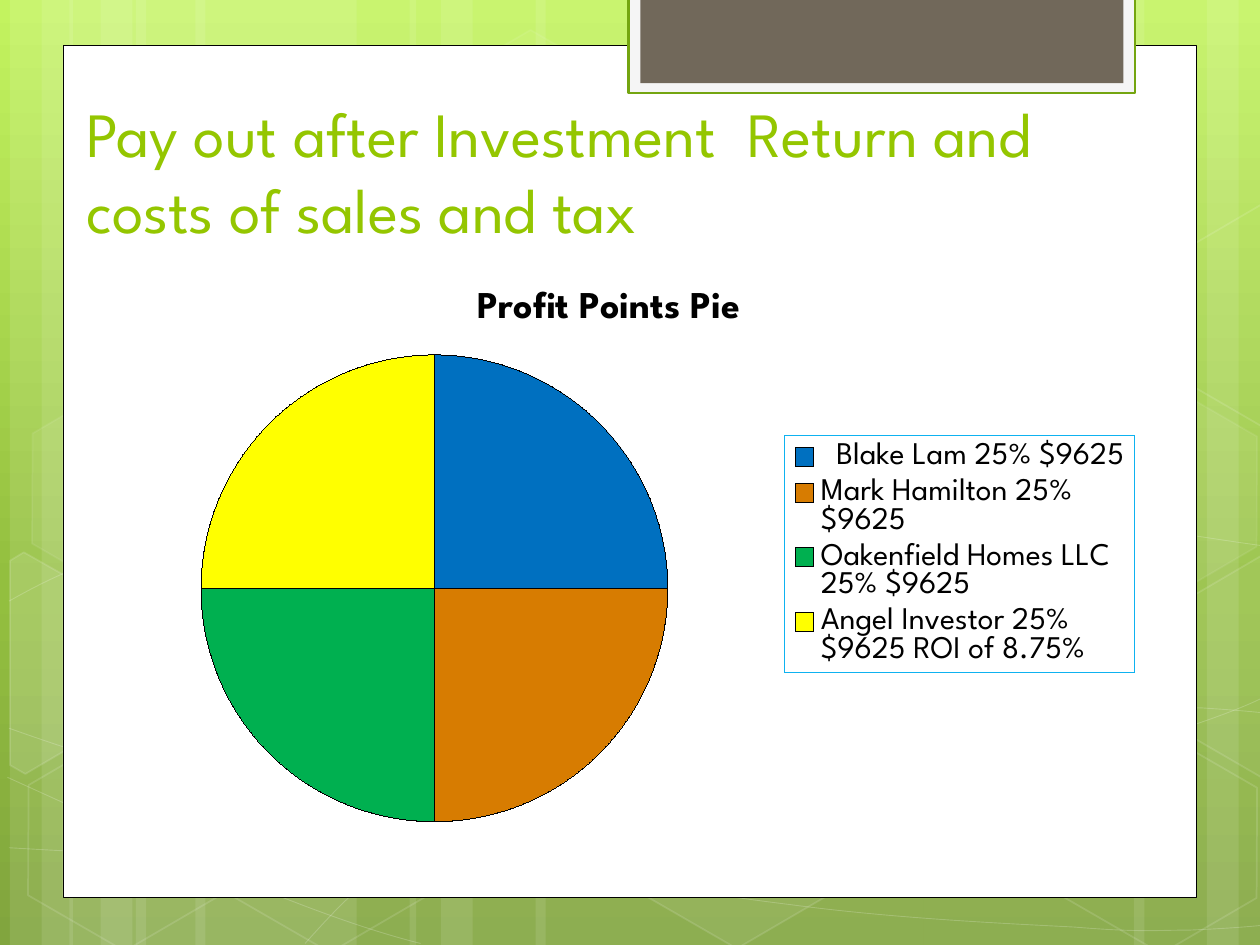
"""Build a profit share slide with a pie chart on a green patterned background."""
from copy import deepcopy
from dataclasses import dataclass
from math import cos, radians, sin
from typing import Optional

from lxml import etree
from pptx import Presentation
from pptx.chart.data import CategoryChartData
from pptx.dml.color import RGBColor
from pptx.enum.chart import XL_CHART_TYPE, XL_LEGEND_POSITION
from pptx.enum.shapes import MSO_SHAPE
from pptx.enum.text import MSO_ANCHOR, MSO_AUTO_SIZE, PP_ALIGN
from pptx.oxml import parse_xml
from pptx.oxml.ns import nsdecls, qn
from pptx.util import Cm, Pt

RECTANGLE = MSO_SHAPE.RECTANGLE
HEXAGON = MSO_SHAPE.HEXAGON
PIE = XL_CHART_TYPE.PIE
LEGEND_RIGHT = XL_LEGEND_POSITION.RIGHT
ANCHOR_BOTTOM = MSO_ANCHOR.BOTTOM
NO_AUTO_SIZE = MSO_AUTO_SIZE.NONE
ALIGN_LEFT = PP_ALIGN.LEFT

WHITE = RGBColor(0xFF, 0xFF, 0xFF)
BLACK = RGBColor(0, 0, 0)
TITLE_GREEN = RGBColor(0x94, 0xC6, 0x00)
TAB_GREEN = RGBColor(0x74, 0xA5, 0x10)
TAB_GREY = RGBColor(0xF5, 0xF5, 0xF5)
TAB_BROWN = RGBColor(0x71, 0x68, 0x5A)
LEGEND_BLUE = RGBColor(0x0E, 0xB2, 0xF0)
GRADIENT = [
    (0, RGBColor(0xC3, 0xF3, 0x5F)),
    (0.62, RGBColor(0x93, 0xBF, 0x3F)),
    (1, RGBColor(0x81, 0xA5, 0x3E)),
]
FONT = "League Spartan"
WIDTH, HEIGHT = 25.4, 19.05
TILT = 30

Point = tuple[float, float]


@dataclass
class Style:
    fill: Optional[RGBColor] = None
    fill_opacity: int = 100
    line: Optional[RGBColor] = None
    line_width: float = 1
    line_opacity: int = 100


@dataclass
class Box:
    left: float
    top: float
    width: float
    height: float
    style: Style


@dataclass
class CutHexagon:
    center: Point
    points: list[Point]
    style: Style


@dataclass
class Slice:
    label: str
    share: int
    color: RGBColor


def glass(fill_opacity: int, line_opacity: int) -> Style:
    return Style(WHITE if fill_opacity else None, fill_opacity, WHITE, 1, line_opacity)


BAND = Style(WHITE, 10)
BANDS = [
    (2.74, 4.45), (0.2, 1.27), (0.84, 2.11), (3.94, 4.45), (1.4, 1.27), (2.03, 2.11),
    (18.62, 4.45), (24.33, 1.27), (22.86, 2.11), (10.8, 7.82), (8.26, 1.27), (8.89, 2.11),
]
CURVE = Style(line=WHITE, line_width=0.5, line_opacity=20)
CURVES = [
    [(0.18, 17.09), (1.55, 17.17), (2.92, 17.25), (4.83, 17.22), (6.73, 17.2),
     (9.09, 17.15), (11.63, 16.89), (14.17, 16.64), (17.78, 16.15), (20.12, 15.67),
     (22.43, 15.19), (24.82, 14.43), (25.58, 14)],
    [(0.18, 12.12), (0.91, 11.71), (1.65, 11.33), (3.07, 10.95), (4.52, 10.57),
     (6.58, 10.01), (8.81, 9.83), (11.07, 9.65), (13.82, 9.63), (16.61, 9.83),
     (19.41, 10.03), (24.05, 10.82), (25.58, 11.02)],
    [(0.15, 15.67), (3.23, 17.07), (6.27, 18.47), (8.48, 19.02)],
    [(0.18, 14.68), (0.97, 14.96), (1.78, 15.24), (3.25, 15.65), (4.72, 16.03),
     (6.93, 16.66), (9.07, 17.09), (11.18, 17.53), (13.84, 17.98), (15.95, 18.24),
     (18.06, 18.52), (20.32, 18.62), (21.67, 18.69), (22.99, 18.8), (23.34, 18.75),
     (24, 18.75), (24.66, 18.72), (25.12, 18.69), (25.58, 18.64)],
    [(6.15, 19.02), (6.6, 18.52), (7.06, 18.01), (7.67, 17.55), (8.28, 17.09),
     (9.14, 16.59), (9.86, 16.23), (10.57, 15.88), (11, 15.72), (11.94, 15.47),
     (12.88, 15.21), (14.55, 14.86), (15.44, 14.68), (16.36, 14.5), (16.48, 14.5),
     (17.27, 14.45), (18.03, 14.38), (19.3, 14.3), (20.17, 14.27), (21.06, 14.25),
     (22.5, 14.27), (24.21, 14.27), (24.66, 14.3), (25.1, 14.33), (25.55, 14.38)],
]
HEXAGONS = [
    Box(left, top, 4.45, 3.86, glass(fill_opacity, line_opacity))
    for left, top, fill_opacity, line_opacity in [
        (8.48, 0.91, 4, 8), (12.62, 14.96, 6, 12), (0.28, 15.01, 0, 12), (0.36, 7.92, 7, 8),
        (4.42, 15.04, 0, 12), (19.13, 11.51, 10, 12), (21.18, 15.06, 0, 12), (21.18, 7.98, 7, 8),
    ]
]
LEFT_EDGE = [(0.2, 11.3), (0.48, 11.13), (2.44, 12.24), (2.41, 14.48), (0.51, 15.6), (0.2, 15.42)]
RIGHT_EDGE = [(23.52, 12.32), (25.43, 11.2), (25.63, 11.33), (25.63, 15.57), (25.45, 15.67), (23.52, 14.55)]
UPPER_RIGHT_EDGE = [(x, y - 7.08) for x, y in RIGHT_EDGE]
CUT_HEXAGONS = [
    CutHexagon((0.91, 13.59), LEFT_EDGE, glass(10, 12)),
    CutHexagon((25.02, 13.21), RIGHT_EDGE, glass(4, 12)),
    CutHexagon((25.02, 6.13), UPPER_RIGHT_EDGE, glass(0, 12)),
]
PANELS = [
    Box(1.27, 0.91, 22.86, 17.18, Style(WHITE, line=BLACK, line_width=0.5)),
    Box(12.67, -0.05, 10.21, 1.93, Style(TAB_GREY, line=TAB_GREEN, line_width=1.25)),
    Box(12.91, -0.05, 9.74, 1.73, Style(TAB_BROWN)),
]
SLICES = [
    Slice("  Blake Lam 25% $9625", 25, RGBColor(0x00, 0x70, 0xC0)),
    Slice("Mark Hamilton 25% $9625", 25, RGBColor(0xD7, 0x7C, 0x01)),
    Slice("Oakenfield Homes LLC 25% $9625", 25, RGBColor(0x00, 0xB0, 0x50)),
    Slice("Angel Investor 25% $9625 ROI of 8.75%", 25, RGBColor(0xFF, 0xFF, 0x00)),
]


def set_opacity(shape, parent: str, percent: int) -> None:
    if percent < 100:
        color = shape.element.xpath(f"./p:spPr/{parent}a:solidFill/a:srgbClr")[0]
        etree.SubElement(color, qn("a:alpha"), val=str(percent * 1000))


def apply_style(shape, style: Style) -> None:
    shape.shadow.inherit = False
    if style.fill is None:
        shape.fill.background()
    else:
        shape.fill.solid()
        shape.fill.fore_color.rgb = style.fill
        set_opacity(shape, "", style.fill_opacity)
    if style.line is None:
        shape.line.fill.background()
    else:
        shape.line.color.rgb = style.line
        shape.line.width = Pt(style.line_width)
        set_opacity(shape, "a:ln/", style.line_opacity)


def draw_box(slide, box: Box, kind=RECTANGLE):
    shape = slide.shapes.add_shape(kind, Cm(box.left), Cm(box.top), Cm(box.width), Cm(box.height))
    apply_style(shape, box.style)
    return shape


def draw_outline(slide, points: list[Point], style: Style, close: bool):
    (start_x, start_y), *rest = [(Cm(x), Cm(y)) for x, y in points]
    builder = slide.shapes.build_freeform(start_x, start_y)
    builder.add_line_segments(rest, close=close)
    shape = builder.convert_to_shape()
    apply_style(shape, style)
    return shape


def draw_curve(slide, controls: list[Point]) -> None:
    shape = draw_outline(slide, controls, CURVE, False)
    segments = shape.element.xpath(".//a:lnTo")
    for start in range(0, len(segments), 3):
        curve = etree.Element(qn("a:cubicBezTo"))
        segments[start].addprevious(curve)
        for segment in segments[start:start + 3]:
            curve.append(segment[0])
            segment.getparent().remove(segment)


def draw_cut_hexagon(slide, hexagon: CutHexagon) -> None:
    center_x, center_y = hexagon.center
    cosine, sine = cos(radians(TILT)), sin(radians(TILT))
    offsets = [(x - center_x, y - center_y) for x, y in hexagon.points]
    upright = [(center_x + x * cosine + y * sine, center_y - x * sine + y * cosine)
               for x, y in offsets]
    draw_outline(slide, upright, hexagon.style, True).rotation = TILT


def draw_background(slide) -> None:
    fill = slide.background.fill
    fill.gradient()
    fill.gradient_angle = 270
    stops = slide.element.xpath(".//a:gsLst")[0]
    stops.append(deepcopy(stops[0]))
    for stop, (position, color) in zip(fill.gradient_stops, GRADIENT):
        stop.position = position
        stop.color.rgb = color
    for left, width in BANDS:
        draw_box(slide, Box(left, 0, width, HEIGHT, BAND))
    for controls in CURVES:
        draw_curve(slide, controls)
    for box in HEXAGONS:
        shape = draw_box(slide, box, HEXAGON)
        shape.rotation = TILT
        shape.adjustments[0] = 0.285
    for hexagon in CUT_HEXAGONS:
        draw_cut_hexagon(slide, hexagon)
    for panel in PANELS:
        draw_box(slide, panel)


def set_font(font, size: float, color: RGBColor, bold: bool = False) -> None:
    font.name, font.size, font.bold = FONT, Pt(size), bold
    font.color.rgb = color


def draw_title(slide, text: str) -> None:
    title = slide.shapes.title
    title.left, title.top, title.width, title.height = Cm(1.48), Cm(1.91), Cm(22.43), Cm(3.18)
    title.element.getparent().append(title.element)
    frame = title.text_frame
    frame.text = text
    frame.auto_size = NO_AUTO_SIZE
    frame.vertical_anchor = ANCHOR_BOTTOM
    paragraph = frame.paragraphs[0]
    paragraph.alignment = ALIGN_LEFT
    set_font(paragraph.font, 36, TITLE_GREEN)


def make_layout(x: float, y: float, w: float, h: float, target: str = ""):
    modes = '<c:xMode val="edge"/><c:yMode val="edge"/>'
    sizes = "".join(f'<c:{key} val="{value}"/>' for key, value in zip("xywh", (x, y, w, h)))
    return parse_xml(f'<c:layout {nsdecls("c")}><c:manualLayout>{target}{modes}{sizes}'
                     '</c:manualLayout></c:layout>')


def draw_pie(slide, heading: str) -> None:
    data = CategoryChartData()
    data.categories = [item.label for item in SLICES]
    data.add_series(heading, [item.share for item in SLICES])
    chart = slide.shapes.add_chart(PIE, Cm(1.7), Cm(5.29), Cm(21.39), Cm(11.63), data).chart
    set_font(chart.font, 18, BLACK)
    chart.has_title = True
    chart.chart_title.text_frame.text = heading
    set_font(chart.chart_title.text_frame.paragraphs[0].font, 21.6, BLACK, True)
    plot = chart.plots[0]
    plot.vary_by_categories = True
    for index, item in enumerate(SLICES):
        wedge = plot.series[0].points[index].format
        wedge.fill.solid()
        wedge.fill.fore_color.rgb = item.color
        wedge.line.color.rgb = BLACK
    chart.has_legend = True
    chart.legend.position = LEGEND_RIGHT
    chart.legend.include_in_layout = False
    set_font(chart.legend.font, 18, BLACK)
    area = chart.element.xpath(".//c:plotArea")[0]
    legend = chart.element.xpath(".//c:legend")[0]
    for old_layout in area.xpath("./c:layout") + legend.xpath("./c:layout"):
        old_layout.getparent().remove(old_layout)
    area.insert(0, make_layout(0.11, 0.16, 0.44, 0.81, '<c:layoutTarget val="inner"/>'))
    legend.xpath("./c:legendPos")[0].addnext(make_layout(0.66, 0.3, 0.33, 0.41))
    legend.xpath("./c:overlay")[0].addnext(parse_xml(
        f'<c:spPr {nsdecls("c", "a")}><a:ln><a:solidFill>'
        f'<a:srgbClr val="{LEGEND_BLUE}"/></a:solidFill></a:ln></c:spPr>'))


def main() -> None:
    presentation = Presentation()
    presentation.slide_width, presentation.slide_height = Cm(WIDTH), Cm(HEIGHT)
    slide = presentation.slides.add_slide(presentation.slide_layouts[5])
    draw_background(slide)
    draw_title(slide, "Pay out after Investment  Return and costs of sales and tax")
    draw_pie(slide, "Profit Points Pie ")
    presentation.save("out.pptx")


if __name__ == "__main__":
    main()
